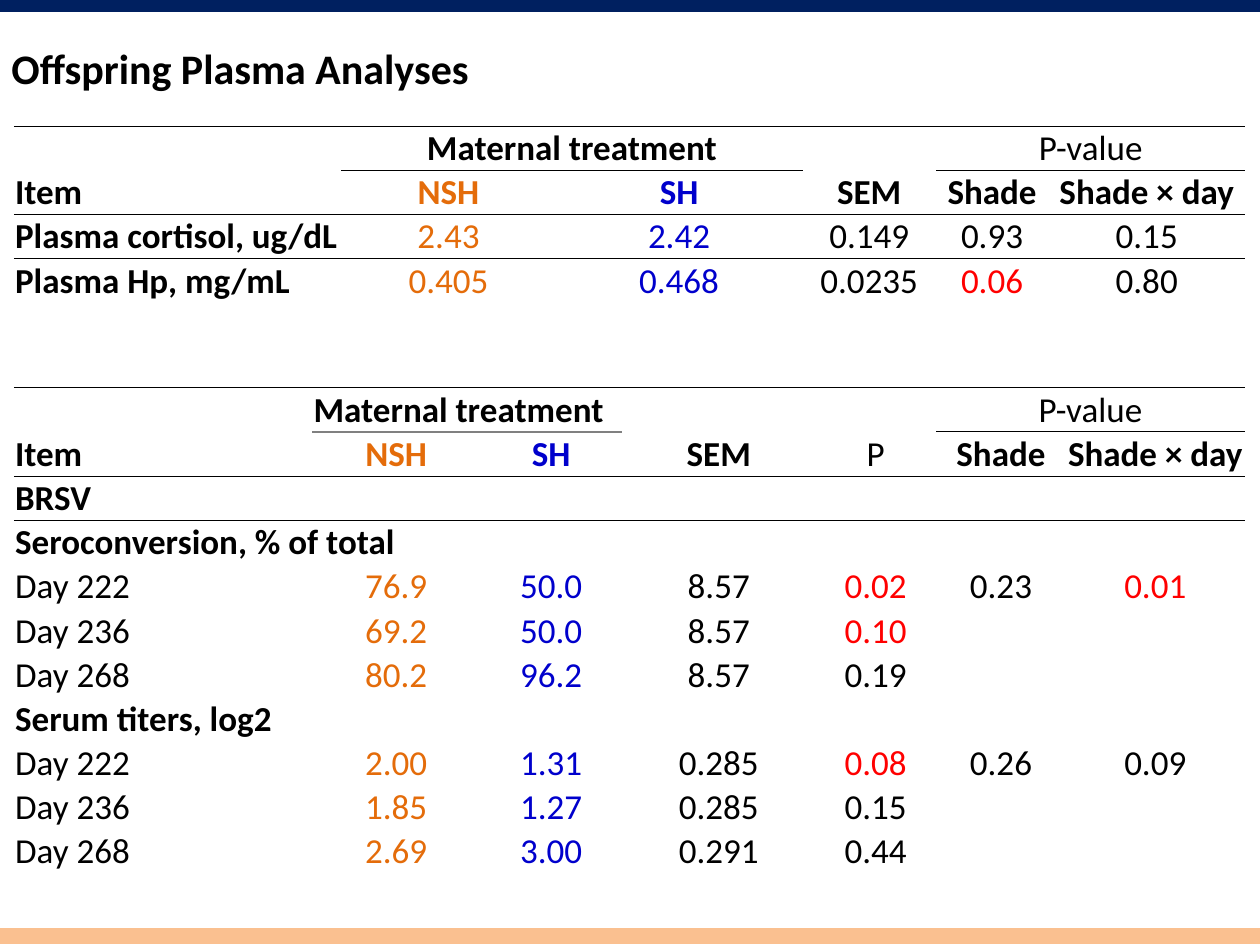
"""Build the offspring plasma analyses slide with its two result tables."""
from dataclasses import dataclass

from lxml.etree import SubElement
from pptx import Presentation
from pptx.dml.color import RGBColor
from pptx.enum.shapes import MSO_SHAPE
from pptx.enum.text import MSO_ANCHOR, PP_ALIGN
from pptx.oxml.ns import qn
from pptx.util import Pt

COLORS = {
    "black": "000000", "grey": "808080", "red": "FF0000", "nsh": "E46C0A",
    "sh": "0000CC", "navy": "002060", "peach": "FAC090",
}
FONT = "Calibri"
ROW_HEIGHT = 25.1
PLAIN_STYLE = "{2D5ABB26-0587-4C30-8999-92F81FD0307C}"
CELL_FORMAT = {
    "margin_left": Pt(0.72), "margin_right": Pt(0.72), "margin_top": Pt(0.72),
    "margin_bottom": Pt(0), "vertical_anchor": MSO_ANCHOR.BOTTOM,
}
TITLE_FORMAT = {"word_wrap": True, "vertical_anchor": MSO_ANCHOR.TOP}


@dataclass
class Bar:
    top: float
    height: float
    color: str


@dataclass
class Rule:
    row: int
    first: int
    last: int
    color: str = "black"
    width: float = 0.5


@dataclass
class Results:
    top: float
    widths: list[float]
    rows: list[list[str]]
    spans: list[tuple[int, int]]
    rules: list[Rule]
    significant: set[tuple[int, int]]
    left_cells: set[tuple[int, int]]


BARS = [Bar(-1.4, 7.9, "navy"), Bar(530.6, 8.6, "peach")]

PLASMA = Results(
    top=72,
    widths=[187.2, 122.4, 141.1, 76.3, 64.1, 112.7],
    rows=[
        ["", "Maternal treatment", "", "", "P-value", ""],
        ["Item", "NSH", "SH", "SEM", "Shade", "Shade × day"],
        ["Plasma cortisol, ug/dL", "2.43", "2.42", "0.149", "0.93", "0.15"],
        ["Plasma Hp, mg/mL", "0.405", "0.468", "0.0235", "0.06", "0.80"],
    ],
    spans=[(0, 1), (0, 4)],
    rules=[Rule(0, 0, 5), Rule(1, 1, 2), Rule(1, 4, 5), Rule(2, 0, 5)],
    significant={(3, 4)},
    left_cells=set(),
)

BRSV = Results(
    top=221.5,
    widths=[170.6, 95.8, 81.4, 110.2, 69.1, 74.2, 102.2],
    rows=[
        ["", "Maternal treatment", "", "", "", "P-value", ""],
        ["Item", "NSH", "SH", "SEM", "P", "Shade", "Shade × day"],
        ["BRSV"],
        ["Seroconversion, % of total"],
        ["Day 222", "76.9", "50.0", "8.57", "0.02", "0.23", "0.01"],
        ["Day 236", "69.2", "50.0", "8.57", "0.10"],
        ["Day 268", "80.2", "96.2", "8.57", "0.19"],
        ["Serum titers, log2"],
        ["Day 222", "2.00", "1.31", "0.285", "0.08", "0.26", "0.09"],
        ["Day 236", "1.85", "1.27", "0.285", "0.15"],
        ["Day 268", "2.69", "3.00", "0.291", "0.44"],
    ],
    spans=[(0, 1), (0, 5), (3, 0)],
    rules=[Rule(0, 0, 6), Rule(1, 1, 2, "grey", 1), Rule(1, 5, 6), Rule(2, 0, 6)],
    significant={(4, 4), (4, 6), (5, 4), (8, 4)},
    left_cells={(0, 1)},
)


def rgb(name: str) -> RGBColor:
    return RGBColor.from_string(COLORS[name])


def apply_format(target, values: dict) -> None:
    for attribute, value in values.items():
        setattr(target, attribute, value)


def style_font(font, size: float, bold: bool, color: str) -> None:
    apply_format(font, {"name": FONT, "size": Pt(size), "bold": bold})
    font.color.rgb = rgb(color)


def add_title(slide, wording: str) -> None:
    title = slide.shapes.title
    apply_format(title, {"left": Pt(-0.7), "top": Pt(20.9), "width": Pt(529.2), "height": Pt(72.7)})
    apply_format(title.text_frame, TITLE_FORMAT)
    title.text_frame.text = wording
    heading = title.text_frame.paragraphs[0]
    heading.alignment = PP_ALIGN.LEFT
    style_font(heading.font, 24, True, "black")


def add_bar(slide, bar: Bar) -> None:
    band = slide.shapes.add_shape(MSO_SHAPE.RECTANGLE, 0, Pt(bar.top), Pt(720), Pt(bar.height))
    band.shadow.inherit = False
    band.fill.solid()
    band.fill.fore_color.rgb = band.line.color.rgb = rgb(bar.color)
    band.line.width = Pt(0.75)


def draw_edge(cell, side: str, rule: Rule) -> None:
    edge = SubElement(cell._tc.get_or_add_tcPr(), qn(f"a:{side}"), w=str(Pt(rule.width)))
    SubElement(SubElement(edge, qn("a:solidFill")), qn("a:srgbClr"), val=COLORS[rule.color])


def is_bold(wording: str, row: int, column: int) -> bool:
    if row < 2:
        return wording not in ("P", "P-value")
    return column == 0 and not wording.startswith("Day")


def cell_color(results: Results, row: int, column: int) -> str:
    if (row, column) in results.significant:
        return "red"
    return {1: "nsh", 2: "sh"}.get(column, "black") if row else "black"


def fill_cell(cell, results: Results, row: int, column: int) -> None:
    values = results.rows[row]
    wording = values[column] if column < len(values) else ""
    cell.text = wording
    entry = cell.text_frame.paragraphs[0]
    at_left = column == 0 or (row, column) in results.left_cells
    entry.alignment = PP_ALIGN.LEFT if at_left else PP_ALIGN.CENTER
    style_font(entry.font, 20, is_bold(wording, row, column), cell_color(results, row, column))
    apply_format(cell, CELL_FORMAT)
    for side, boundary in (("lnT", row), ("lnB", row + 1)):
        for rule in results.rules:
            if rule.row == boundary and rule.first <= column <= rule.last:
                draw_edge(cell, side, rule)
    cell.fill.background()


def add_results(slide, results: Results) -> None:
    row_count, column_count = len(results.rows), len(results.widths)
    table = slide.shapes.add_table(
        row_count, column_count, Pt(7.9), Pt(results.top),
        Pt(sum(results.widths)), Pt(ROW_HEIGHT * row_count),
    ).table
    apply_format(table, {"first_row": False, "horz_banding": False})
    table._tbl.tblPr.find(qn("a:tableStyleId")).text = PLAIN_STYLE
    for column, width in zip(table.columns, results.widths):
        column.width = Pt(width)
    for row in range(row_count):
        table.rows[row].height = Pt(ROW_HEIGHT)
        for column in range(column_count):
            fill_cell(table.cell(row, column), results, row, column)
    for row, column in results.spans:
        table.cell(row, column).merge(table.cell(row, column + 1))


def main() -> None:
    presentation = Presentation()
    apply_format(presentation, {"slide_width": Pt(720), "slide_height": Pt(540)})
    slide = presentation.slides.add_slide(presentation.slide_layouts[5])
    add_title(slide, "Offspring Plasma Analyses")
    for bar in BARS:
        add_bar(slide, bar)
    for results in (PLASMA, BRSV):
        add_results(slide, results)
    presentation.save("out.pptx")


if __name__ == "__main__":
    main()
